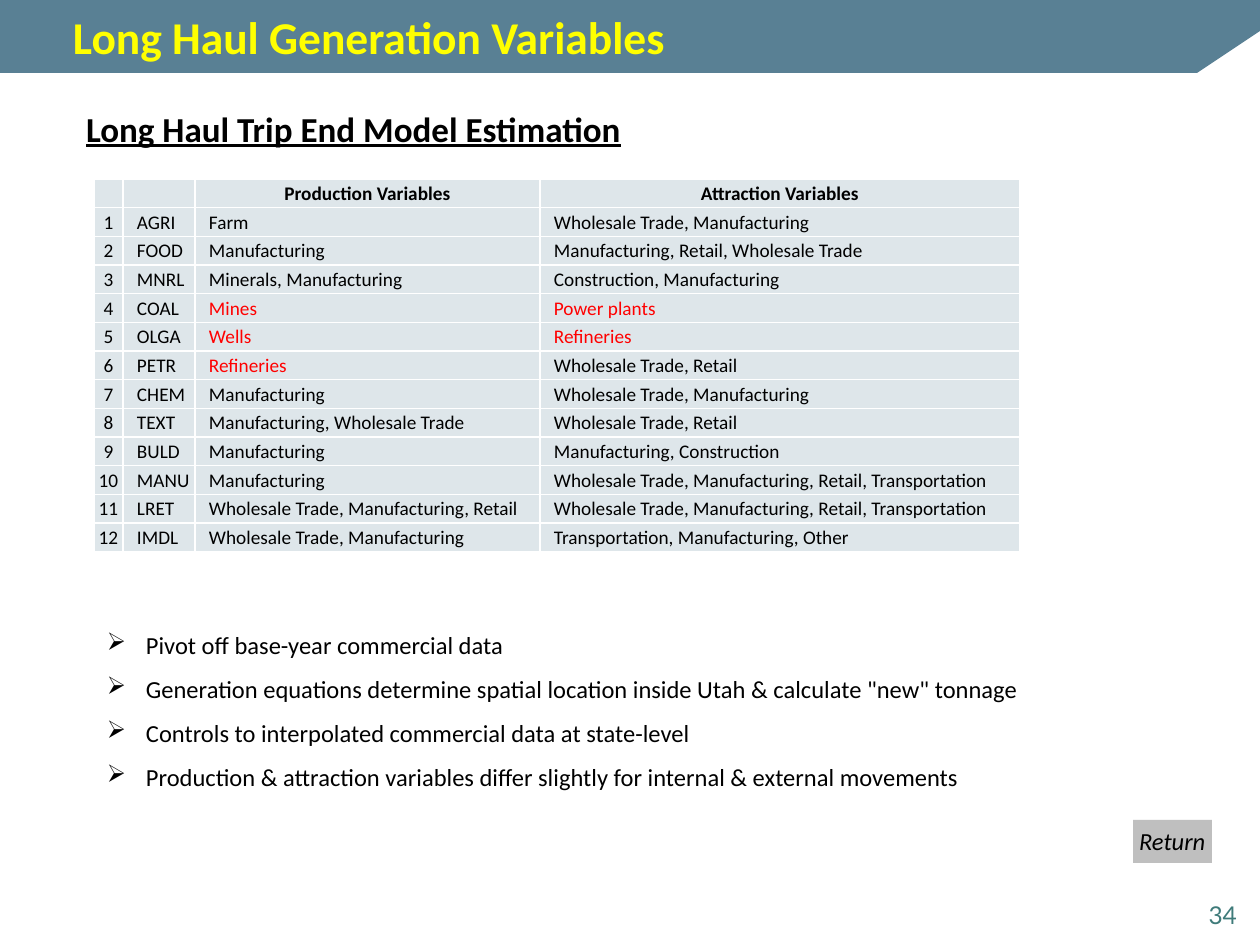
from dataclasses import dataclass

import pptx
import pptx.dml.color
import pptx.enum.shapes
import pptx.enum.text
import pptx.oxml
import pptx.oxml.ns
import pptx.util
from lxml import etree

Align = pptx.enum.text.PP_ALIGN
Anchor = pptx.enum.text.MSO_ANCHOR
EMU_PER_PX = 914400 / 126


@dataclass(frozen=True)
class Theme:
    font: str = "Calibri"
    number_font: str = "Lato"
    band: str = "598094"
    title: str = "FFFF00"
    text: str = "000000"
    highlight: str = "FF0000"
    cell: str = "DEE6EA"
    border: str = "FFFFFF"
    button: str = "BFBFBF"
    number: str = "3F7B7A"
    title_pt: int = 26
    heading_pt: int = 20
    body_pt: int = 14
    table_pt: int = 11


THEME = Theme()


@dataclass(frozen=True)
class Style:
    size: int
    color: str = THEME.text
    font: str = THEME.font
    bold: bool = False
    italic: bool = False
    underline: bool = False
    align: Align = Align.LEFT


@dataclass(frozen=True)
class Label:
    """Text in a box; box is left, top, width, height and insets follow l, t, r, b."""
    lines: tuple[str, ...]
    box: tuple[int, int, int, int]
    style: Style
    anchor: Anchor = Anchor.TOP
    insets: tuple[int, int, int, int] = (13, 6, 13, 6)
    fill: str = ""
    wrap: bool = True
    grow: bool = False
    bullet: str = ""


@dataclass(frozen=True)
class Commodity:
    code: str
    production: str
    attraction: str
    highlights: tuple[int, ...] = ()


LABELS = (
    Label(("Long Haul Generation Variables",), (73, 0, 1134, 73),
          Style(THEME.title_pt, THEME.title, bold=True), Anchor.MIDDLE, (0, 6, 13, 6)),
    Label(("Long Haul Trip End Model Estimation",), (73, 101, 1050, 55),
          Style(THEME.heading_pt, bold=True, underline=True), grow=True),
    Label(("Pivot off base-year commercial data",
           'Generation equations determine spatial location inside Utah & calculate "new" tonnage',
           "Controls to interpolated commercial data at state-level",
           "Production & attraction variables differ slightly for internal & external movements"),
          (94, 609, 960, 190), Style(THEME.body_pt), grow=True, bullet="➢"),
    Label(("34",), (1143, 872, 94, 63),
          Style(THEME.body_pt, THEME.number, THEME.number_font, align=Align.RIGHT),
          Anchor.BOTTOM, (13, 6, 0, 6)),
    Label(("Return",), (1133, 820, 79, 43), Style(THEME.body_pt, italic=True),
          insets=(6, 6, 6, 6), fill=THEME.button, wrap=False, grow=True),
)

TABLE_BOX = (94, 179, 926, 373)
COLUMNS = (29, 72, 345, 480)
HEADER = ("", "", "Production Variables", "Attraction Variables")
COMMODITIES = (
    Commodity("AGRI", "Farm", "Wholesale Trade, Manufacturing"),
    Commodity("FOOD", "Manufacturing", "Manufacturing, Retail, Wholesale Trade"),
    Commodity("MNRL", "Minerals, Manufacturing", "Construction, Manufacturing"),
    Commodity("COAL", "Mines", "Power plants", (2, 3)),
    Commodity("OLGA", "Wells", "Refineries", (2, 3)),
    Commodity("PETR", "Refineries", "Wholesale Trade, Retail", (2,)),
    Commodity("CHEM", "Manufacturing", "Wholesale Trade, Manufacturing"),
    Commodity("TEXT", "Manufacturing, Wholesale Trade", "Wholesale Trade, Retail"),
    Commodity("BULD", "Manufacturing", "Manufacturing, Construction"),
    Commodity("MANU", "Manufacturing", "Wholesale Trade, Manufacturing, Retail, Transportation"),
    Commodity("LRET", "Wholesale Trade, Manufacturing, Retail",
              "Wholesale Trade, Manufacturing, Retail, Transportation"),
    Commodity("IMDL", "Wholesale Trade, Manufacturing", "Transportation, Manufacturing, Other"),
)


def px(n: float) -> pptx.util.Emu:
    return pptx.util.Emu(round(n * EMU_PER_PX))


def rgb(color: str) -> pptx.dml.color.RGBColor:
    return pptx.dml.color.RGBColor.from_string(color)


def paint(fill, color: str) -> None:
    fill.solid()
    fill.fore_color.rgb = rgb(color)


def sub(parent, tag: str, **attrs: str):
    return etree.SubElement(parent, pptx.oxml.ns.qn(tag), attrs)


def style_paragraph(p, style: Style) -> None:
    p.alignment = style.align
    f = p.font
    f.size = pptx.util.Pt(style.size)
    f.name = style.font
    f.color.rgb = rgb(style.color)
    f.bold = style.bold
    f.italic = style.italic
    f.underline = style.underline


def set_insets(target, insets: tuple[int, int, int, int]) -> None:
    (target.margin_left, target.margin_top,
     target.margin_right, target.margin_bottom) = map(px, insets)


def add_label(s, label: Label) -> None:
    box = [px(n) for n in label.box]
    if label.fill:
        sp = s.shapes.add_shape(pptx.enum.shapes.MSO_SHAPE.RECTANGLE, *box)
        sp.shadow.inherit = False
        paint(sp.fill, label.fill)
        sp.line.fill.background()
    else:
        sp = s.shapes.add_textbox(*box)
    tf = sp.text_frame
    tf.word_wrap = label.wrap
    tf.vertical_anchor = label.anchor
    if label.grow:
        tf.auto_size = pptx.enum.text.MSO_AUTO_SIZE.SHAPE_TO_FIT_TEXT
    set_insets(tf, label.insets)
    for i, line in enumerate(label.lines):
        p = tf.paragraphs[0] if i == 0 else tf.add_paragraph()
        p.text = line
        if label.bullet:
            p.line_spacing = 1.5
            pPr = p._p.get_or_add_pPr()
            pPr.set("marL", str(px(39)))
            pPr.set("indent", str(px(-39)))
            sub(pPr, "a:buChar", char=label.bullet)
        style_paragraph(p, label.style)


def add_band(s) -> None:
    builder = s.shapes.build_freeform(0, 73, scale=EMU_PER_PX)
    builder.add_line_segments([(1197, 73), (1260, 31), (1260, 0), (0, 0)], close=True)
    sp = builder.convert_to_shape()
    sp.shadow.inherit = False
    paint(sp.fill, THEME.band)
    sp.line.fill.background()


def fill_cell(cell, text: str, style: Style) -> None:
    set_insets(cell, (1, 1, 1, 0))
    cell.vertical_anchor = Anchor.MIDDLE
    tcPr = cell._tc.get_or_add_tcPr()
    for side in "LRTB":
        ln = sub(tcPr, f"a:ln{side}", w=str(pptx.util.Pt(1)))
        sub(sub(ln, "a:solidFill"), "a:srgbClr", val=THEME.border)
    paint(cell.fill, THEME.cell)
    p = cell.text_frame.paragraphs[0]
    p.text = text
    if style.align == Align.LEFT:
        p._p.get_or_add_pPr().set("marL", str(px(13)))
    style_paragraph(p, style)
    if not text:
        sub(p._p, "a:endParaRPr", sz=str(style.size * 100))


def add_variables_table(s) -> None:
    rows = len(COMMODITIES) + 1
    table = s.shapes.add_table(rows, len(COLUMNS), *map(px, TABLE_BOX)).table
    for column, width in zip(table.columns, COLUMNS):
        column.width = px(width)
    for row in table.rows:
        row.height = px(TABLE_BOX[3] / rows)
    for j, text in enumerate(HEADER):
        fill_cell(table.cell(0, j), text, Style(THEME.table_pt, bold=True, align=Align.CENTER))
    for i, c in enumerate(COMMODITIES, 1):
        for j, text in enumerate((str(i), c.code, c.production, c.attraction)):
            color = THEME.highlight if j in c.highlights else THEME.text
            align = Align.LEFT if j else Align.CENTER
            fill_cell(table.cell(i, j), text, Style(THEME.table_pt, color, align=align))


def main() -> None:
    prs = pptx.Presentation()
    prs.slide_width, prs.slide_height = px(1260), px(945)
    s = prs.slides.add_slide(prs.slide_layouts[6])
    add_band(s)
    title, heading, *rest = LABELS
    add_label(s, title)
    add_label(s, heading)
    add_variables_table(s)
    for label in rest:
        add_label(s, label)
    prs.save("out.pptx")


if __name__ == "__main__":
    main()
